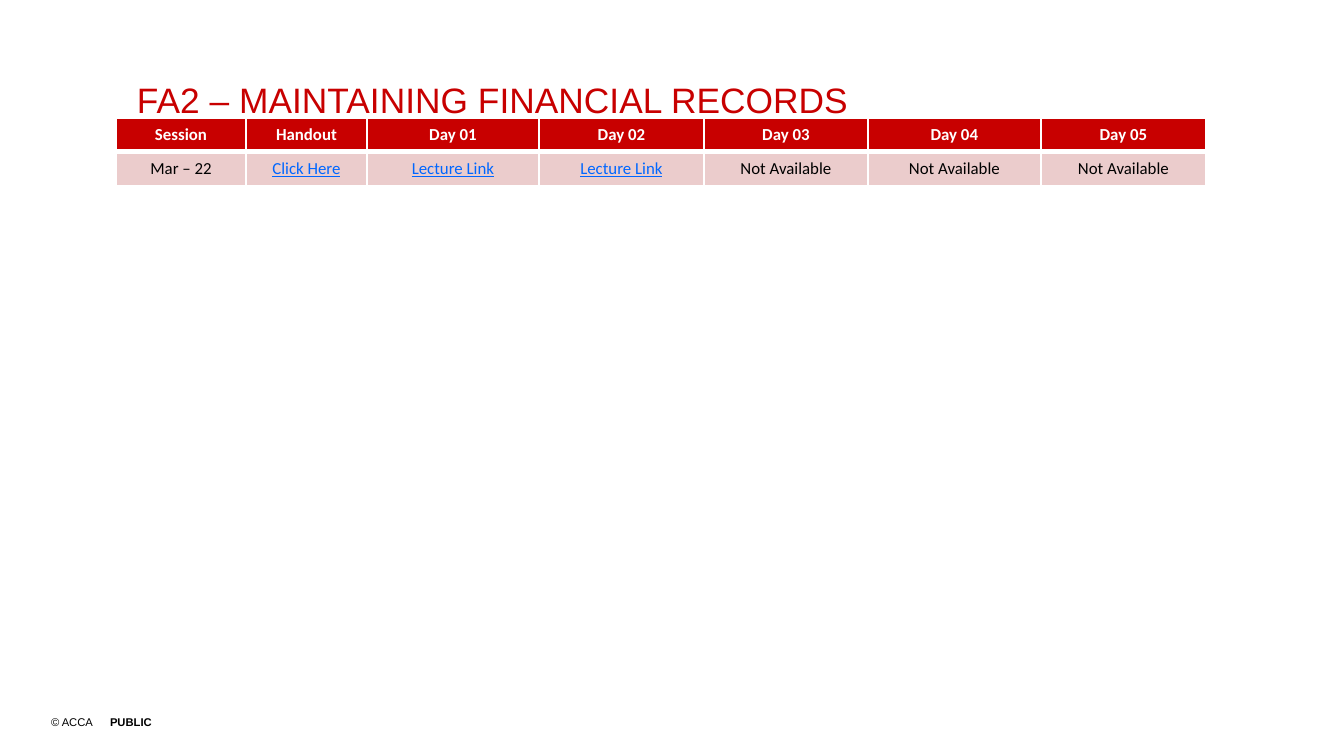
from dataclasses import dataclass

from lxml.etree import SubElement
from pptx import Presentation
from pptx.dml.color import RGBColor
from pptx.enum.text import MSO_ANCHOR, PP_ALIGN
from pptx.oxml.ns import qn
from pptx.util import Emu, Pt

EMU_PER_PX = 914400 / 134.4


def px(length):
    """Turn a length in px into EMU."""
    return Emu(round(length * EMU_PER_PX))


@dataclass(frozen=True)
class Theme:
    """Colours, fonts and type sizes of the slide."""
    red: str = "C80000"
    pink: str = "EBCCCC"
    white: str = "FFFFFF"
    black: str = "000000"
    link: str = "0066FF"
    heading_font: str = "Arial"
    table_font: str = "Calibri"
    title_size: float = 18.9
    table_size: float = 9
    footer_size: float = 6
    thin_rule: float = 1
    header_rule: float = 3


class SlideBuilder:
    """Holds the theme and the current slide and adds elements to it."""

    def __init__(self, slide, theme):
        """Keep the slide and its theme."""
        self.slide = slide
        self.theme = theme

    def add_run(self, paragraph, text, font_name, size, color, bold=False, underline=False):
        """Add one styled run to a paragraph."""
        run = paragraph.add_run()
        run.text = text
        font = run.font
        font.name, font.size = font_name, Pt(size)
        font.bold, font.underline = bold, underline
        font.color.rgb = RGBColor.from_string(color)

    def add_text(self, left, top, width, height):
        """Add a text box without margins and return its first paragraph."""
        frame = self.slide.shapes.add_textbox(px(left), px(top), px(width), px(height)).text_frame
        frame.word_wrap = True
        frame.margin_left = frame.margin_top = frame.margin_right = frame.margin_bottom = 0
        return frame.paragraphs[0]

    def add_title(self, text):
        """Add the slide title."""
        paragraph = self.add_text(137, 81, 1070, 42)
        paragraph.line_spacing = 0.95
        self.add_run(paragraph, text, self.theme.heading_font, self.theme.title_size, self.theme.red)

    def add_footer(self, owner, label):
        """Add the copyright line with a bold label at a tab stop."""
        paragraph = self.add_text(51, 715, 239, 13)
        tabs = SubElement(paragraph._p.get_or_add_pPr(), qn("a:tabLst"))
        SubElement(tabs, qn("a:tab"), pos=str(px(59)), algn="l")
        theme = self.theme
        for text, bold in ((owner + "\t", False), (label, True)):
            self.add_run(paragraph, text, theme.heading_font, theme.footer_size, theme.black, bold)

    def add_borders(self, cell, top, bottom):
        """Draw white borders around a cell."""
        properties = cell._tc.get_or_add_tcPr()
        thin = self.theme.thin_rule
        for side, width in (("L", thin), ("R", thin), ("T", top), ("B", bottom)):
            line = SubElement(properties, qn(f"a:ln{side}"), w=str(Pt(width)))
            SubElement(SubElement(line, qn("a:solidFill")), qn("a:srgbClr"), val=self.theme.white)

    def fill_cell(self, cell, text, is_header):
        """Style a header or body cell and write its text."""
        theme = self.theme
        is_link = text in ("Click Here", "Lecture Link")
        if is_header:
            fill, color = theme.red, theme.white
            self.add_borders(cell, theme.thin_rule, theme.header_rule)
        else:
            fill, color = theme.pink, theme.link if is_link else theme.black
            self.add_borders(cell, theme.header_rule, theme.thin_rule)
            cell.vertical_anchor = MSO_ANCHOR.MIDDLE
        cell.fill.solid()
        cell.fill.fore_color.rgb = RGBColor.from_string(fill)
        paragraph = cell.text_frame.paragraphs[0]
        paragraph.alignment = PP_ALIGN.CENTER
        self.add_run(paragraph, text, theme.table_font, theme.table_size, color, is_header, is_link)

    def add_table(self, left, top, column_widths, row_height, rows):
        """Add a table whose first row is the header."""
        table = self.slide.shapes.add_table(
            len(rows), len(column_widths), px(left), px(top),
            px(sum(column_widths)), px(row_height * len(rows))).table
        for column, width in zip(table.columns, column_widths):
            column.width = px(width)
        for row_index, texts in enumerate(rows):
            table.rows[row_index].height = px(row_height)
            for column_index, text in enumerate(texts):
                self.fill_cell(table.cell(row_index, column_index), text, row_index == 0)


def main():
    """Build and save the presentation."""
    presentation = Presentation()
    presentation.slide_width, presentation.slide_height = px(1344), px(756)
    slide = presentation.slides.add_slide(presentation.slide_layouts[6])
    builder = SlideBuilder(slide, Theme())
    builder.add_footer("© ACCA", "PUBLIC")
    builder.add_title("FA2 – MAINTAINING FINANCIAL RECORDS")
    days = [f"Day {number:02}" for number in range(1, 6)]
    sessions = [
        ["Session", "Handout", *days],
        ["Mar – 22", "Click Here", *["Lecture Link"] * 2, *["Not Available"] * 3],
    ]
    builder.add_table(116, 118, [130, 121, 172, 165, 164, 173, 165], 34, sessions)
    presentation.save("out.pptx")


if __name__ == "__main__":
    main()
